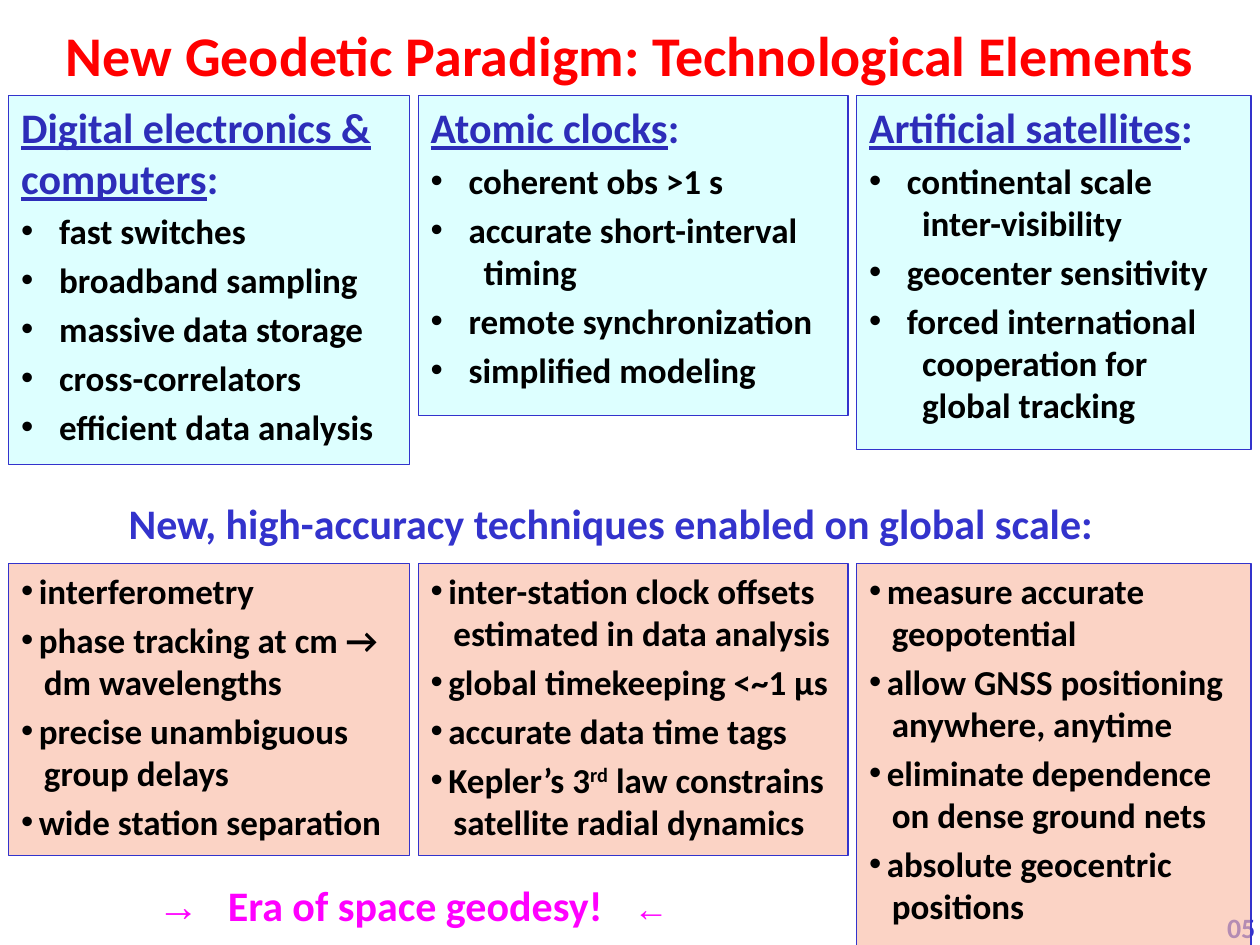
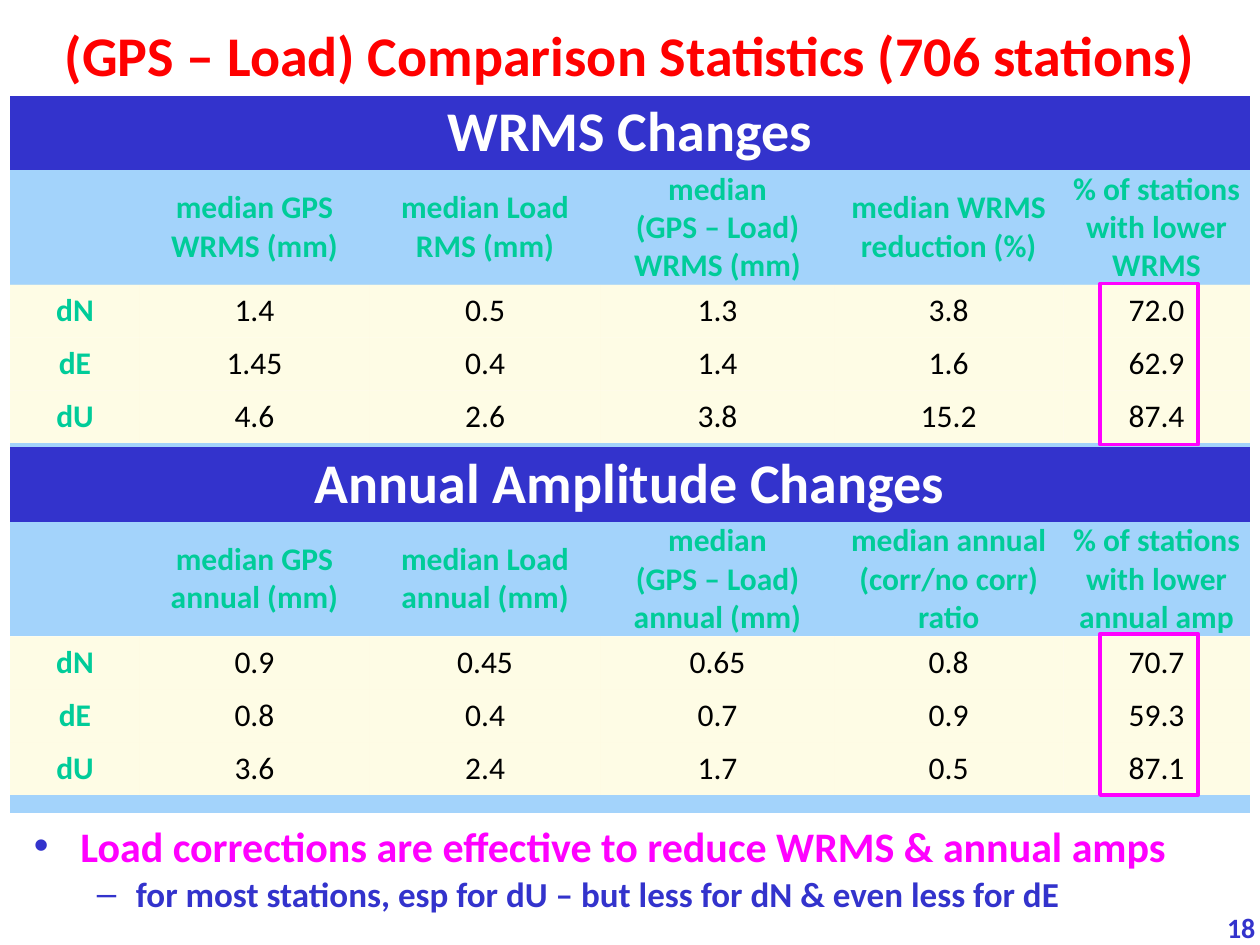
"""Build two geodesy slides: technological elements and GPS-load statistics."""
from lxml import etree
from pptx import Presentation
from pptx.dml.color import RGBColor
from pptx.enum.shapes import MSO_SHAPE
from pptx.enum.text import MSO_ANCHOR, MSO_AUTO_SIZE, PP_ALIGN
from pptx.oxml.ns import qn
from pptx.util import Inches, Pt

RED = RGBColor(0xFF, 0x00, 0x00)
BLUE = RGBColor(0x33, 0x33, 0xCC)
DARK_BLUE = RGBColor(0x2D, 0x2D, 0xB9)
MAGENTA = RGBColor(0xFF, 0x00, 0xFF)
GREEN = RGBColor(0x00, 0xCC, 0x99)
BLACK = RGBColor(0x00, 0x00, 0x00)
WHITE = RGBColor(0xFF, 0xFF, 0xFF)
CYAN = RGBColor(0xCC, 0xFF, 0xFF)
SALMON = RGBColor(0xFA, 0xBC, 0xA7)
SKY = RGBColor(0xA3, 0xD3, 0xFB)
CREAM = RGBColor(0xFE, 0xFB, 0xDB)
BASE_FONT = {"name": "Calibri", "bold": True}
NO_GRID_STYLE = "{2D5ABB26-0587-4C30-8999-92F81FD0307C}"


def write(p, text, color, size, **fmt):
    """Add one formatted run to a paragraph."""
    r = p.add_run()
    r.text = text
    r.font.color.rgb = color
    r.font.size = Pt(size)
    for key, value in {**BASE_FONT, **fmt}.items():
        setattr(r.font, key, value)
    return r


def indent(p, left, first=0, bullet=None, color=BLACK):
    """Set paragraph indents and an optional bullet."""
    pPr = p._p.get_or_add_pPr()
    pPr.set("marL", str(Inches(left)))
    pPr.set("indent", str(Inches(first)))
    if bullet:
        clr = etree.SubElement(pPr, qn("a:buClr"))
        etree.SubElement(clr, qn("a:srgbClr"), val=str(color))
        etree.SubElement(pPr, qn("a:buFont"), typeface="Arial")
        etree.SubElement(pPr, qn("a:buChar"), char=bullet)


prs = Presentation()
prs.slide_width, prs.slide_height = Inches(10), Inches(7.5)

PAGES = [
    ("New Geodetic Paradigm: Technological Elements", "05"),
    ("(GPS – Load) Comparison Statistics (706 stations)", "18"),
]
for title, number in PAGES:
    s = prs.slides.add_slide(prs.slide_layouts[5])
    sp = s.shapes.title
    place = {"left": 0, "top": 0.01, "width": 10, "height": 0.84}
    for key, value in place.items():
        setattr(sp, key, Inches(value))
    tf = sp.text_frame
    frame = {"word_wrap": True, "auto_size": MSO_AUTO_SIZE.NONE,
             "vertical_anchor": MSO_ANCHOR.MIDDLE}
    for key, value in frame.items():
        setattr(tf, key, value)
    p = tf.paragraphs[0]
    p.alignment = PP_ALIGN.CENTER
    write(p, title, RED, 32)

    tf = s.shapes.add_textbox(Inches(9.64), Inches(7.23), Inches(0.36), Inches(0.27)).text_frame
    tf.margin_right = 0
    p = tf.paragraphs[0]
    p.line_spacing = 0.8
    write(p, number, BLUE, 16)

elements, statistics = prs.slides

COLUMNS = [(0.07, 3.18), (3.32, 3.41), (6.8, 3.13)]
ELEMENTS = [
    (2.93, "Digital electronics & computers",
     ["fast switches", "broadband sampling", "massive data storage",
      "cross-correlators", "efficient data analysis"]),
    (2.54, "Atomic clocks",
     ["coherent obs >1 s", "accurate short-interval\ntiming",
      "remote synchronization", "simplified modeling"]),
    (2.81, "Artificial satellites",
     ["continental scale\ninter-visibility", "geocenter sensitivity",
      "forced international\ncooperation for\nglobal tracking"]),
]
TECHNIQUES = [
    (2.32, None,
     ["interferometry", "phase tracking at cm →\ndm wavelengths",
      "precise unambiguous\ngroup delays", "wide station separation"]),
    (2.32, None,
     ["inter-station clock offsets\nestimated in data analysis",
      "global timekeeping <~1 µs", "accurate data time tags",
      "Kepler’s 3^rd^ law constrains\nsatellite radial dynamics"]),
    (3.06, None,
     ["measure accurate\ngeopotential", "allow GNSS positioning\nanywhere, anytime",
      "eliminate dependence\non dense ground nets", "absolute geocentric\npositions"]),
]
BANDS = [(0.76, CYAN, 0.3, 0.42, ELEMENTS), (4.47, SALMON, 0.14, 0.18, TECHNIQUES)]

for top, fill, hang, wrapped, boxes in BANDS:
    for (left, width), (height, heading, items) in zip(COLUMNS, boxes):
        sp = elements.shapes.add_shape(MSO_SHAPE.RECTANGLE, Inches(left), Inches(top),
                                       Inches(width), Inches(height))
        sp.shadow.inherit = False
        sp.fill.solid()
        sp.fill.fore_color.rgb = fill
        etree.SubElement(sp.fill._xPr.find(qn("a:solidFill"))[0], qn("a:alpha"), val="65000")
        sp.line.color.rgb = BLUE
        sp.line.width = Pt(0.75)
        tf = sp.text_frame
        frame = {"word_wrap": True, "vertical_anchor": MSO_ANCHOR.TOP,
                 "margin_right": Inches(0.05)}
        for key, value in frame.items():
            setattr(tf, key, value)
        p = tf.paragraphs[0]
        p.alignment = PP_ALIGN.LEFT
        if heading:
            write(p, heading, DARK_BLUE, 24, underline=True)
            write(p, ":", DARK_BLUE, 24)
        for item in items:
            for i, line in enumerate(item.split("\n")):
                if p.runs:
                    p = tf.add_paragraph()
                    p.alignment = PP_ALIGN.LEFT
                    p.space_before = Pt(0 if i else 4)
                if i:
                    indent(p, wrapped)
                else:
                    indent(p, hang, -hang, "•")
                for j, part in enumerate(line.split("^")):
                    r = write(p, part, BLACK, 20)
                    if j == 1:
                        r.font._element.set("baseline", "30000")

tf = elements.shapes.add_textbox(0, Inches(3.98), Inches(9.7), Inches(0.44)).text_frame
tf.word_wrap = True
p = tf.paragraphs[0]
p.alignment = PP_ALIGN.CENTER
p.line_spacing = 0.8
write(p, "New, high-accuracy techniques enabled on global scale:", BLUE, 24)

tf = elements.shapes.add_textbox(Inches(1.15), Inches(7.01), Inches(4.6), Inches(0.44)).text_frame
tf.word_wrap = True
p = tf.paragraphs[0]
p.line_spacing = 0.8
tabs = etree.SubElement(p._p.get_or_add_pPr(), qn("a:tabLst"))
for stop in (0.56, 3.78):
    etree.SubElement(tabs, qn("a:tab"), pos=str(Inches(stop)), algn="l")
write(p, "→\t", MAGENTA, 24, name="Times New Roman")
write(p, "Era of space geodesy!\t", MAGENTA, 24)
write(p, "←", MAGENTA, 20, name="Times New Roman")

COL_WIDTHS = [1.03, 1.82, 1.84, 1.85, 1.82, 1.48]
ROW_HEIGHTS = [0.59, 0.91, 0.42, 0.42, 0.42, 0.14]
TABLES = [
    (0.76, 2.25, [
        ["WRMS Changes"],
        ["", "median GPS WRMS (mm)", "median Load RMS (mm)", "median\n(GPS – Load) WRMS (mm)",
         "median WRMS reduction (%)", "% of stations with lower WRMS"],
        ["dN", "1.4", "0.5", "1.3", "3.8", "72.0"],
        ["dE", "1.45", "0.4", "1.4", "1.6", "62.9"],
        ["dU", "4.6", "2.6", "3.8", "15.2", "87.4"],
        []]),
    (3.55, 5.03, [
        ["Annual Amplitude Changes"],
        ["", "median GPS annual (mm)", "median Load annual (mm)",
         "median\n(GPS – Load) annual (mm)", "median annual (corr/no corr) ratio",
         "% of stations with lower annual amp"],
        ["dN", "0.9", "0.45", "0.65", "0.8", "70.7"],
        ["dE", "0.8", "0.4", "0.7", "0.9", "59.3"],
        ["dU", "3.6", "2.4", "1.7", "0.5", "87.1"],
        []]),
]
ROW_FILLS = [BLUE, SKY, CREAM, CREAM, CREAM, SKY]
MARGINS = ("margin_left", "margin_right", "margin_top", "margin_bottom")

for top, frame_top, rows in TABLES:
    table = statistics.shapes.add_table(6, 6, Inches(0.08), Inches(top), Inches(sum(COL_WIDTHS)),
                                        Inches(sum(ROW_HEIGHTS))).table
    table.first_row = table.horz_banding = False
    table._tbl.tblPr.find(qn("a:tableStyleId")).text = NO_GRID_STYLE
    for col, width in zip(table.columns, COL_WIDTHS):
        col.width = Inches(width)
    for i, (values, fill) in enumerate(zip(rows, ROW_FILLS)):
        table.rows[i].height = Inches(ROW_HEIGHTS[i])
        if len(values) < 2:
            table.cell(i, 0).merge(table.cell(i, 5))
        for j in range(6):
            cell = table.cell(i, j)
            for key in MARGINS:
                setattr(cell, key, 0)
            cell.vertical_anchor = MSO_ANCHOR.MIDDLE
            cell.fill.solid()
            cell.fill.fore_color.rgb = fill
            if fill == CREAM:
                color = cell.fill._xPr.find(qn("a:solidFill"))[0]
                etree.SubElement(color, qn("a:alpha"), val="70000")
            tf = cell.text_frame
            text = values[j] if j < len(values) else ""
            if not text:
                etree.SubElement(tf.paragraphs[0]._p, qn("a:endParaRPr"), sz="600")
                continue
            for k, line in enumerate(text.split("\n")):
                p = tf.add_paragraph() if k else tf.paragraphs[0]
                p.alignment = PP_ALIGN.CENTER
                if i == 0:
                    write(p, line, WHITE, 32)
                elif i == 1 or j == 0:
                    write(p, line, GREEN, 18)
                else:
                    write(p, line, BLACK, 18, bold=False)

for _, frame_top, _ in TABLES:
    sp = statistics.shapes.add_shape(MSO_SHAPE.RECTANGLE, Inches(8.73), Inches(frame_top),
                                     Inches(0.78), Inches(1.28))
    sp.shadow.inherit = False
    sp.fill.background()
    sp.line.color.rgb = MAGENTA
    sp.line.width = Pt(2)

NOTES = [
    ("Load corrections are effective to reduce WRMS & annual amps", MAGENTA, 24, 0.37, -0.37, "•"),
    ("for most stations, esp for dU – but less for dN & even less for dE", BLUE, 20, 0.81, -0.31, "–"),
]
tf = statistics.shapes.add_textbox(Inches(0.17), Inches(6.54), Inches(9.51), Inches(0.69)).text_frame
tf.word_wrap = True
for i, (text, color, size, left, first, bullet) in enumerate(NOTES):
    p = tf.add_paragraph() if i else tf.paragraphs[0]
    indent(p, left, first, bullet, BLUE)
    p.line_spacing = 0.8
    p.space_before = Pt(6 * i)
    p.level = i
    write(p, text, color, size)

prs.save("out.pptx")
